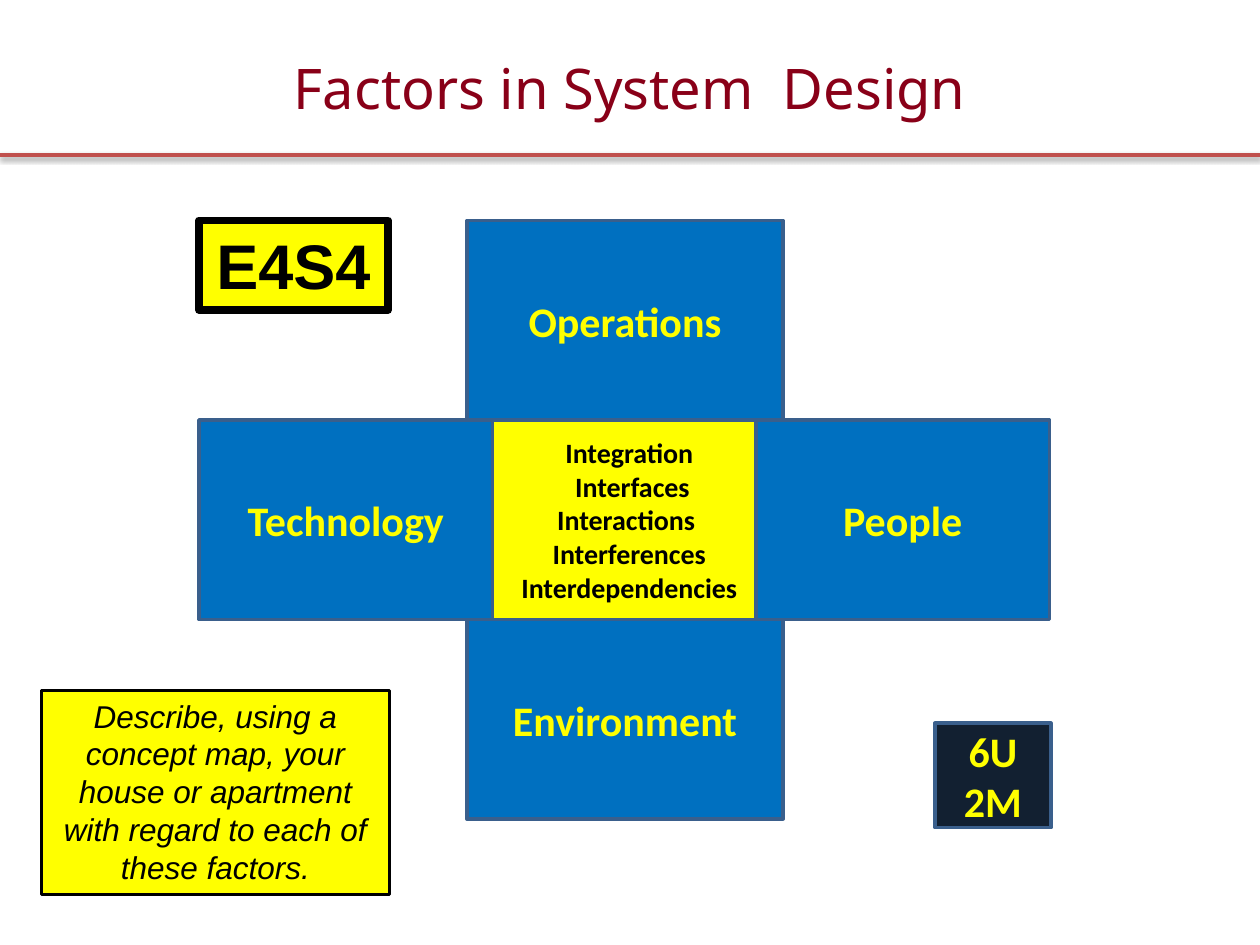
from dataclasses import dataclass

from lxml import etree
from pptx import Presentation
from pptx.dml.color import RGBColor
from pptx.enum.shapes import MSO_CONNECTOR, MSO_SHAPE
from pptx.enum.text import MSO_ANCHOR, PP_ALIGN
from pptx.oxml import parse_xml
from pptx.oxml.ns import nsdecls, qn
from pptx.util import Inches, Pt

# Content
TITLE = "Factors in System  Design"
CENTRE = ["Integration", " Interfaces", "Interactions  Interferences", "Interdependencies"]
FACTORS = {"top": "Operations", "left": "Technology", "right": "People", "bottom": "Environment"}
CODE = ["E4S4"]
TASK = ["Describe, using a concept map, your house or apartment "
        "with regard to each of these factors."]
COUNTS = ["6U", "2M"]


@dataclass(frozen=True)
class Theme:
    title: str = "890018"
    rule: str = "C0504D"
    blue: str = "0070C0"
    navy: str = "122031"
    edge: str = "3A5F8C"
    yellow: str = "FFFF00"
    black: str = "000000"
    title_font: str = "Noto Sans"
    factor_font: str = "Calibri"
    note_font: str = "Arial"
    title_size: int = 32
    code_size: int = 36
    factor_size: int = 24
    note_size: int = 18
    centre_size: int = 16


THEME = Theme()


def write(shape, lines, font, size, color, anchor=MSO_ANCHOR.MIDDLE, bold=False, italic=False):
    frame = shape.text_frame
    frame.word_wrap = True
    frame.vertical_anchor = anchor
    for index, line in enumerate(lines):
        paragraph = frame.add_paragraph() if index else frame.paragraphs[0]
        paragraph.alignment = PP_ALIGN.CENTER
        run = paragraph.add_run()
        run.text = line
        run.font.name = font
        run.font.size = Pt(size)
        run.font.bold = bold
        run.font.italic = italic
        run.font.color.rgb = RGBColor.from_string(color)


def add_box(shapes, place, fill, edge=THEME.edge, edge_width=2):
    shape = shapes.add_shape(MSO_SHAPE.RECTANGLE, *map(Inches, place))
    shape.shadow.inherit = False
    shape.fill.solid()
    shape.fill.fore_color.rgb = RGBColor.from_string(fill)
    shape.line.color.rgb = RGBColor.from_string(edge)
    shape.line.width = Pt(edge_width)
    return shape


def add_title_rule(slide, y):
    rule = slide.shapes.add_connector(
        MSO_CONNECTOR.STRAIGHT, 0, Inches(y), Inches(10), Inches(y))
    rule.line.color.rgb = RGBColor.from_string(THEME.rule)
    rule.line.width = Pt(2)
    effects = etree.SubElement(rule._element.spPr, qn("a:effectLst"))
    effects.append(parse_xml(
        f'<a:outerShdw {nsdecls("a")} blurRad="40000" dist="20000" dir="5400000" '
        f'rotWithShape="0"><a:srgbClr val="{THEME.black}"><a:alpha val="38000"/>'
        '</a:srgbClr></a:outerShdw>'))


def add_cross(slide):
    middle_x, top, height = 4.96, 1.75, 1.583
    tall_width, side_width, centre_width = 2.51, 2.33, 2.17
    left, right = 1.58, 6.0
    row = top + height
    tall_left = middle_x - tall_width / 2
    places = {
        "top": (tall_left, top, tall_width, height),
        "left": (left, row, side_width, height),
        "right": (right, row, side_width, height),
        "bottom": (tall_left, row + height, tall_width, height),
    }
    group = slide.shapes.add_group_shape()
    centre = add_box(group.shapes, (left + side_width, row, centre_width, height), THEME.yellow)
    write(centre, CENTRE, THEME.factor_font, THEME.centre_size, THEME.black, bold=True)
    for side, name in FACTORS.items():
        factor = add_box(group.shapes, places[side], THEME.blue)
        write(factor, [name], THEME.factor_font, THEME.factor_size, THEME.yellow, bold=True)


def main():
    presentation = Presentation()
    presentation.slide_width, presentation.slide_height = Inches(10), Inches(7.5)
    slide = presentation.slides.add_slide(presentation.slide_layouts[6])

    # Heading
    add_title_rule(slide, 1.23)
    title = slide.shapes.add_textbox(0, Inches(0.36), Inches(10), Inches(0.67))
    write(title, [TITLE], THEME.title_font, THEME.title_size, THEME.title)

    # Cross of factors
    add_cross(slide)

    # Boxes around the cross
    code = add_box(slide.shapes, (1.58, 1.75, 1.5, 0.71), THEME.yellow, THEME.black, 4.5)
    write(code, CODE, THEME.note_font, THEME.code_size, THEME.black, MSO_ANCHOR.TOP, bold=True)
    counts = add_box(slide.shapes, (7.42, 5.74, 0.92, 0.83), THEME.navy)
    write(counts, COUNTS, THEME.factor_font, THEME.factor_size, THEME.yellow, bold=True)
    task = add_box(slide.shapes, (0.33, 5.48, 2.76, 1.62), THEME.yellow, THEME.black, 1.5)
    write(task, TASK, THEME.note_font, THEME.note_size, THEME.black, MSO_ANCHOR.TOP, italic=True)

    presentation.save("out.pptx")


if __name__ == "__main__":
    main()
